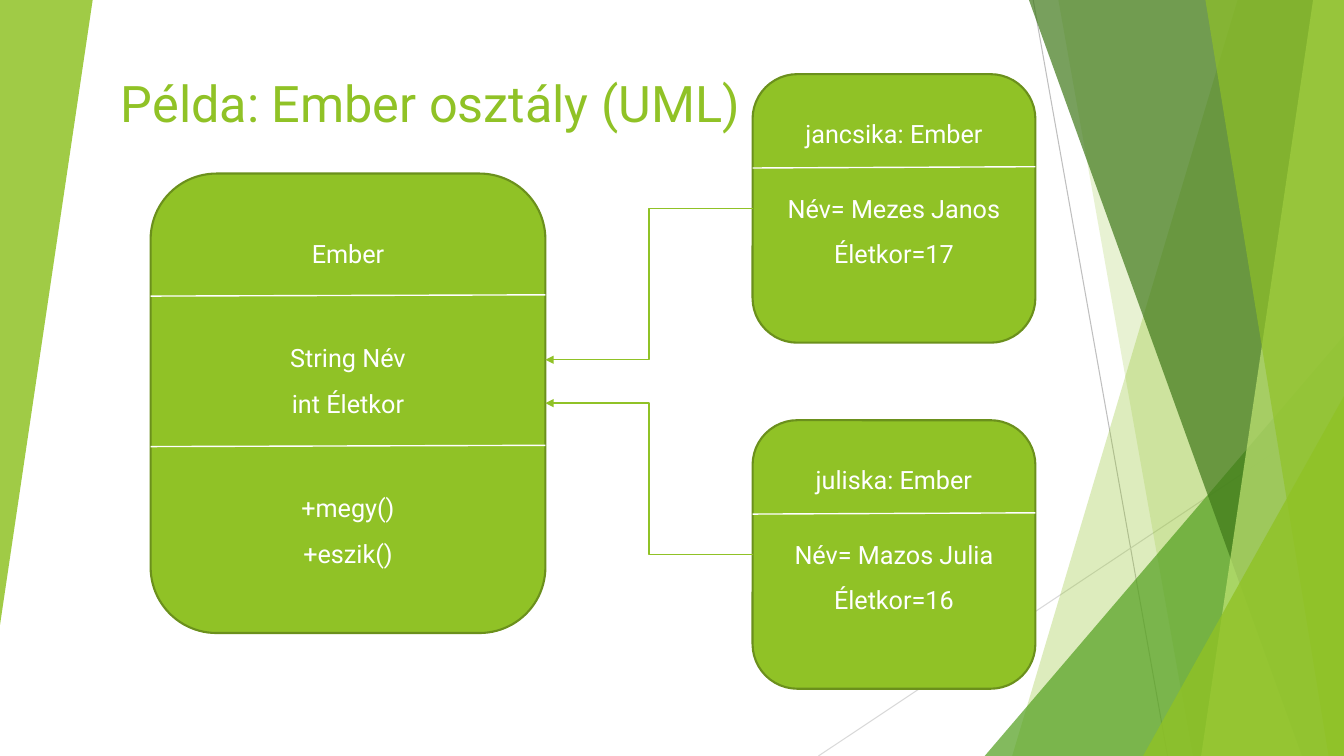
from lxml import etree
from pptx import Presentation
from pptx import util as u
from pptx.dml import color
from pptx.enum import shapes as s, text as t
from pptx.oxml import ns

WIDE, HIGH = 960, 540
GREEN, WHITE = "90C226", "FFFFFF"
BLANK = 21.1


def rgb(code):
    """Turn a hex string into a colour."""
    return color.RGBColor.from_string(code)


def put(obj, **vals):
    """Set each named value on an object."""
    for name, val in vals.items():
        setattr(obj, name, val)


def add(node, tag, **attrs):
    """Append a DrawingML child element."""
    return etree.SubElement(node, ns.qn(tag), attrs)


def paint(shape, code, alpha=100):
    """Fill a shape, with an optional opacity in percent."""
    shape.shadow.inherit = False
    shape.fill.solid()
    shape.fill.fore_color.rgb = rgb(code)
    if alpha < 100:
        tint = shape.fill._xPr.find(".//" + ns.qn("a:srgbClr"))
        add(tint, "a:alpha", val=str(alpha * 1000))


def band(page, top, base, code, alpha):
    """Draw a slanted band that reaches the right edge."""
    pen = page.shapes.build_freeform(top, 0, scale=float(u.Pt(1)))
    pen.add_line_segments([(WIDE, 0), (WIDE, HIGH), (base, HIGH)])
    shape = pen.convert_to_shape()
    paint(shape, code, alpha)
    shape.line.fill.background()


def wedge(page, area, code, alpha, turn=0):
    """Draw a right-angled triangle."""
    kind = s.MSO_SHAPE.ISOSCELES_TRIANGLE
    shape = page.shapes.add_shape(kind, *map(u.Pt, area))
    shape.adjustments[0] = 1
    shape.rotation = turn
    paint(shape, code, alpha)
    shape.line.fill.background()


def link(page, ends, code, width=1, bent=False):
    """Draw a straight rule, or a bent arrow."""
    kind = s.MSO_CONNECTOR.ELBOW if bent else s.MSO_CONNECTOR.STRAIGHT
    wire = page.shapes.add_connector(kind, *map(u.Pt, ends))
    wire.line.width = u.Pt(width)
    wire.line.color.rgb = rgb(code)
    if bent:
        add(wire.line._get_or_add_ln(), "a:tailEnd", type="triangle")
    add(wire._element.spPr, "a:effectLst")


def style(para, size, code):
    """Format the text of a paragraph."""
    put(para.font, name="Roboto", size=u.Pt(size))
    para.font.color.rgb = rgb(code)


def card(page, area, name, parts, gap, rules, foot=0):
    """Draw a UML box: a name, then groups of rows under rules."""
    left, top, width, _ = area
    kind = s.MSO_SHAPE.FLOWCHART_ALTERNATE_PROCESS
    shape = page.shapes.add_shape(kind, *map(u.Pt, area))
    paint(shape, GREEN)
    shape.line.color.rgb = rgb("6B901C")
    shape.line.width = u.Pt(1.5)
    frame = shape.text_frame
    put(frame, word_wrap=True, vertical_anchor=t.MSO_ANCHOR.MIDDLE,
        margin_bottom=u.Pt(3.6 + foot))
    para = frame.paragraphs[0]
    put(para, text=name, alignment=t.PP_ALIGN.CENTER)
    style(para, 18, WHITE)
    for rows in parts:
        for num, row in enumerate(rows):
            para = frame.add_paragraph()
            put(para, text=row, alignment=t.PP_ALIGN.CENTER,
                line_spacing=1.5, space_before=u.Pt(0 if num else gap))
            style(para, 18, WHITE)
    for drop in rules:
        y = top + drop
        link(page, (left, y, left + width, y - 0.9), WHITE)


def scene(page):
    """Draw the green facets at both edges."""
    link(page, (738, 0, 834, HIGH), "BFBFBF", 0.75)
    link(page, (WIDE, 290, 584.6, HIGH), "D9D9D9", 0.75)
    band(page, 884, 723, GREEN, 30)
    band(page, 756, 852, GREEN, 20)
    wedge(page, (703.4, 239.8, 256.6, 300.2), "54A021", 72)
    band(page, 735, 930, "3F7819", 70)
    band(page, 938, 858, "C0E474", 70)
    band(page, 861, 949, GREEN, 65)
    wedge(page, (816.5, 283, 143.5, 257), GREEN, 80)
    wedge(page, (0, 0, 66.2, 446.4), GREEN, 85, 180)


def head(page, words):
    """Place and format the title."""
    title = page.shapes.title
    put(title, left=u.Pt(79.2), top=u.Pt(28.8),
        width=u.Pt(484.6), height=u.Pt(69.8))
    put(title.text_frame, text=words, word_wrap=True,
        vertical_anchor=t.MSO_ANCHOR.BOTTOM)
    para = title.text_frame.paragraphs[0]
    para.alignment = t.PP_ALIGN.LEFT
    style(para, 36, GREEN)


def main():
    """Build the slide and save it."""
    deck = Presentation()
    put(deck, slide_width=u.Pt(WIDE), slide_height=u.Pt(HIGH))
    page = deck.slides.add_slide(deck.slide_layouts[5])
    scene(page)
    head(page, "Példa: Ember osztály (UML)")
    card(page, (107.6, 124, 282, 328.2), "Ember",
         [("String Név", "int Életkor"), ("+megy()", "+eszik()")],
         2 * BLANK, (87.5, 195))
    people = [(300.2, "juliska: Ember", "Mazos Julia", 16, 288),
              (53, "jancsika: Ember", "Mezes Janos", 17, 257)]
    for top, name, full, age, goal in people:
        rows = (f"Név= {full}", f"Életkor={age}")
        card(page, (537.6, top, 202, 191.8), name, [rows],
             BLANK, (67,), BLANK)
        y = top + 95.9
        link(page, (537.6, y, 389.6, goal), GREEN, bent=True)
    deck.save("out.pptx")


if __name__ == "__main__":
    main()
